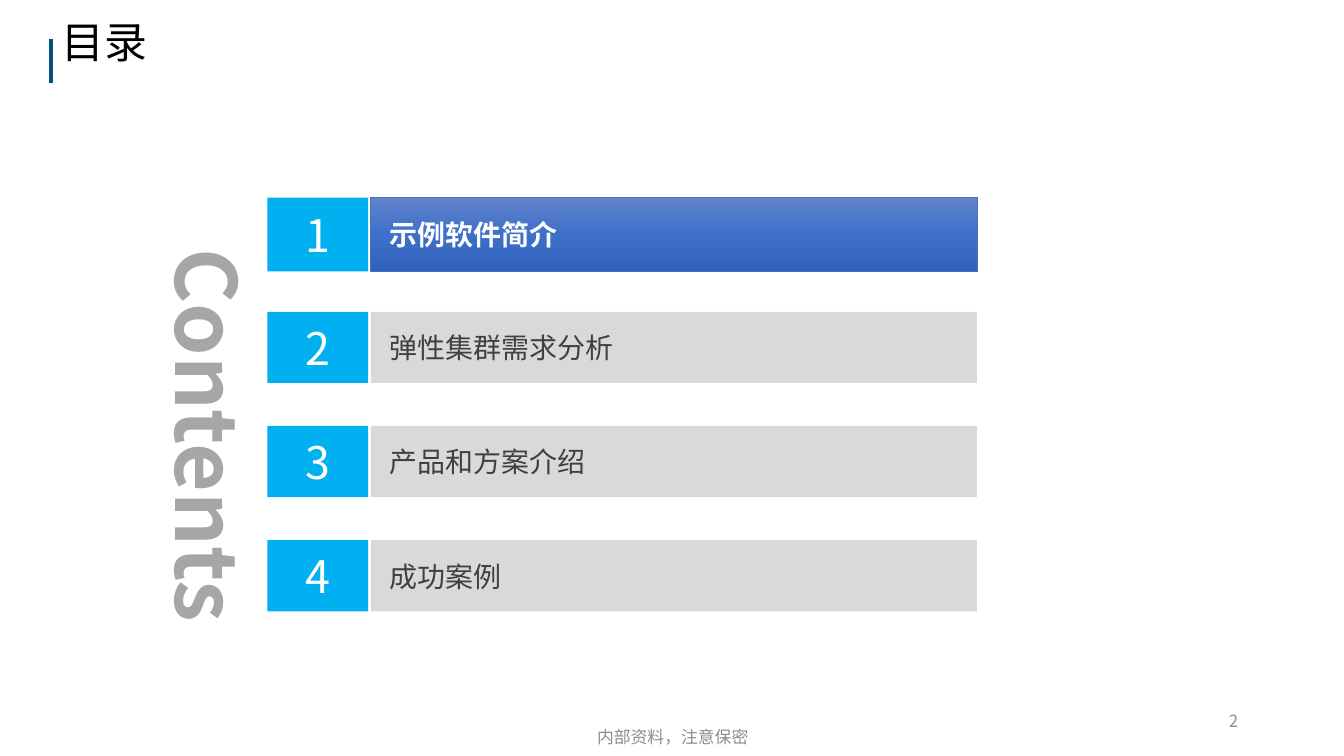
"""Build the contents slide of an internal company presentation."""
import copy

import pptx
import pptx.dml.color
import pptx.enum.shapes
import pptx.enum.text
import pptx.oxml.ns
import pptx.util
from lxml import etree

Inches = pptx.util.Inches
Align = pptx.enum.text.PP_ALIGN
Anchor = pptx.enum.text.MSO_ANCHOR
qn = pptx.oxml.ns.qn

TITLE = "目录"
SIDE_LABEL = "Contents"
FOOTER = "内部资料，注意保密"
PAGE_NUMBER = "2"
SECTIONS = ["示例软件简介", "弹性集群需求分析", "产品和方案介绍", "成功案例"]
ACTIVE = 0

THEME = {
    "font": "Noto Sans CJK SC",
    "title": "000000", "accent": "00507A", "number": "00B0F0",
    "bar": "D9D9D9", "bar_text": "404040", "white": "FFFFFF",
    "side": "A6A6A6", "footer": "8C8C8C", "active_line": "4472C4",
    "gradient": [(0, "6183CB"), (0.5, "3E70CA"), (1, "3062BB")],
    "title_size": 23, "number_size": 24, "bar_size": 15,
    "side_size": 45, "footer_size": 9,
}
SLIDE_WIDTH = Inches(10)
SLIDE_HEIGHT = SLIDE_WIDTH * 9 // 16
NUMBER_LEFT, NUMBER_WIDTH = 1.99, 0.75
BAR_LEFT, BAR_WIDTH = 2.76, 4.51
FIRST_TOP, PITCH = 1.47, 0.85
ROW_HEIGHT, ACTIVE_HEIGHT = 0.53, 0.55


def rgb(name):
    return pptx.dml.color.RGBColor.from_string(THEME[name])


def write_text(shape, text, *, size, color, bold=False, align=Align.LEFT,
               anchor=Anchor.MIDDLE, left_inset=0.1, spacing=None):
    frame = shape.text_frame
    frame.word_wrap = True
    frame.vertical_anchor = anchor
    frame.margin_left = Inches(left_inset)
    paragraph = frame.paragraphs[0]
    paragraph.alignment = align
    if spacing:
        paragraph.line_spacing = spacing
    run = paragraph.add_run()
    run.text = text
    run.font.size = pptx.util.Pt(THEME[size])
    run.font.bold = bold
    run.font.color.rgb = rgb(color)
    run.font.name = THEME["font"]
    etree.SubElement(run.font._element, qn("a:ea"), typeface=THEME["font"])


def add_text(slide, box, text, **text_format):
    shape = slide.shapes.add_textbox(*map(Inches, box))
    write_text(shape, text, **text_format)
    return shape


def add_rectangle(slide, box, fill, text, **text_format):
    shape = slide.shapes.add_shape(
        pptx.enum.shapes.MSO_SHAPE.RECTANGLE, *map(Inches, box))
    shape.shadow.inherit = False
    shape.fill.solid()
    shape.fill.fore_color.rgb = rgb(fill)
    shape.line.fill.background()
    write_text(shape, text, **text_format)
    return shape


def highlight(shape):
    shape.fill.gradient()
    shape.fill.gradient_angle = 270
    stop_list = shape._element.spPr.find(".//" + qn("a:gsLst"))
    stop_list.append(copy.deepcopy(stop_list[0]))
    for stop, (position, color) in zip(shape.fill.gradient_stops, THEME["gradient"]):
        stop.position = position
        stop.color.rgb = pptx.dml.color.RGBColor.from_string(color)
    shape.line.color.rgb = rgb("active_line")
    shape.line.width = pptx.util.Pt(0.5)


def add_section(slide, index, section):
    active = index == ACTIVE
    top = FIRST_TOP + index * PITCH
    height = ACTIVE_HEIGHT if active else ROW_HEIGHT
    add_rectangle(slide, (NUMBER_LEFT, top, NUMBER_WIDTH, height), "number",
                  str(index + 1), size="number_size", color="white",
                  align=Align.CENTER)
    bar = add_rectangle(slide, (BAR_LEFT, top, BAR_WIDTH, height), "bar", section,
                        size="bar_size", color="white" if active else "bar_text",
                        bold=active, left_inset=0.14)
    if active:
        highlight(bar)


def add_title(slide):
    accent = slide.shapes.add_connector(
        pptx.enum.shapes.MSO_CONNECTOR.STRAIGHT,
        *map(Inches, (0.38, 0.29, 0.38, 0.62)))
    accent.line.color.rgb = rgb("accent")
    accent.line.width = pptx.util.Pt(2.25)
    etree.SubElement(accent._element.spPr, qn("a:effectLst"))
    add_text(slide, (0.39, 0.04, 9.34, 0.59), TITLE, size="title_size",
             color="title", left_inset=0.07, spacing=0.9)


def main():
    presentation = pptx.Presentation()
    presentation.slide_width = SLIDE_WIDTH
    presentation.slide_height = SLIDE_HEIGHT
    slide = presentation.slides.add_slide(presentation.slide_layouts[6])

    add_title(slide)
    for index, section in enumerate(SECTIONS):
        add_section(slide, index, section)
    side = add_text(slide, (1.02, 1.75, 0.96, 3.81), SIDE_LABEL, size="side_size",
                    color="side", bold=True, anchor=Anchor.TOP)
    side.text_frame._txBody.bodyPr.set("vert", "eaVert")
    add_text(slide, (3.42, 5.33, 3.17, 0.3), FOOTER, size="footer_size",
             color="footer", align=Align.CENTER)
    add_text(slide, (7.06, 5.21, 2.25, 0.3), PAGE_NUMBER, size="footer_size",
             color="footer", align=Align.RIGHT)
    presentation.save("out.pptx")


if __name__ == "__main__":
    main()
